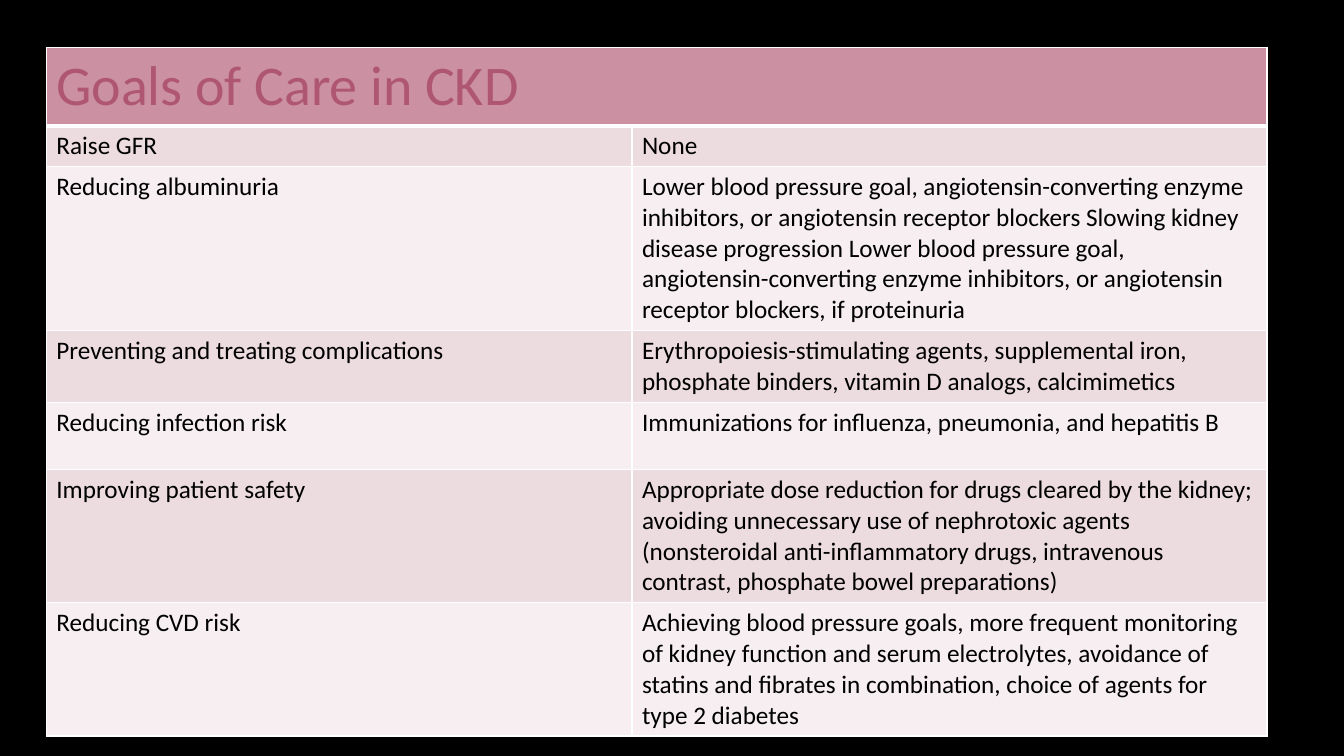
from lxml import etree
from pptx import Presentation, util as u
from pptx.dml.color import RGBColor
from pptx.oxml import ns

GOALS = [
    ("Raise GFR", "None", 28),
    ("Reducing albuminuria",
     "Lower blood pressure goal, angiotensin-converting enzyme inhibitors, or "
     "angiotensin receptor blockers Slowing kidney disease progression Lower "
     "blood pressure goal, angiotensin-converting enzyme inhibitors, or "
     "angiotensin receptor blockers, if proteinuria", 111.6),
    ("Preventing and treating complications",
     "Erythropoiesis-stimulating agents, supplemental iron, phosphate binders, "
     "vitamin D analogs, calcimimetics", 48.24),
    ("Reducing infection risk",
     "Immunizations for influenza, pneumonia, and hepatitis B", 48.24),
    ("Improving patient safety",
     "Appropriate dose reduction for drugs cleared by the kidney; avoiding "
     "unnecessary use of nephrotoxic agents (nonsteroidal anti-inflammatory "
     "drugs, intravenous contrast, phosphate bowel preparations)", 90),
    ("Reducing CVD risk",
     "Achieving blood pressure goals, more frequent monitoring of kidney "
     "function and serum electrolytes, avoidance of statins and fibrates in "
     "combination, choice of agents for type 2 diabetes", 90),
]


def rgb(value):
    return RGBColor.from_string(value)


class Deck:
    font = "Calibri"
    ink = "000000"
    title_ink = "AF5672"
    header_fill = "CB91A3"
    bands = ("ECDCE0", "F6EEF0")
    border = "FFFFFF"

    def __init__(self, width, height):
        self.prs = Presentation()
        self.prs.slide_width, self.prs.slide_height = u.Pt(width), u.Pt(height)

    def add_slide(self, color):
        self.slide = self.prs.slides.add_slide(self.prs.slide_layouts[6])
        fill = self.slide.background.fill
        fill.solid()
        fill.fore_color.rgb = rgb(color)

    def line(self, tag, width, color, alpha=100):
        ln = etree.Element(ns.qn(f"a:{tag}"), w=str(u.Pt(width)))
        fill = etree.SubElement(ln, ns.qn("a:solidFill"))
        clr = etree.SubElement(fill, ns.qn("a:srgbClr"), val=color)
        if alpha < 100:
            etree.SubElement(clr, ns.qn("a:alpha"), val=str(alpha * 1000))
        return ln

    def cell(self, cell, words, fill, size=18, color=ink, bottom=1):
        cell.fill.solid()
        cell.fill.fore_color.rgb = rgb(fill)
        tc_pr = cell._tc.get_or_add_tcPr()
        for i, tag in enumerate(("lnL", "lnR", "lnT", "lnB")):
            width = bottom if tag == "lnB" else 1
            tc_pr.insert(i, self.line(tag, width, self.border))
        p = cell.text_frame.paragraphs[0]
        r = p.add_run()
        r.text = words
        f = r.font
        f.name, f.size, f.bold = self.font, u.Pt(size), False
        f.color.rgb = rgb(color)
        return r

    def table(self, left, top, height, columns, title, title_height, rows):
        frame = self.slide.shapes.add_table(
            len(rows) + 1, len(columns), u.Pt(left), u.Pt(top),
            u.Pt(sum(columns)), u.Pt(height))
        table = frame.table
        for column, width in zip(table.columns, columns):
            column.width = u.Pt(width)

        # Header across all columns, with a faint text outline
        table.rows[0].height = u.Pt(title_height)
        head = table.cell(0, 0)
        head.merge(table.cell(0, len(columns) - 1))
        r = self.cell(head, title, self.header_fill, 40, self.title_ink, 3)
        r.font._element.insert(0, self.line("ln", 0.75, "404040", 10))

        # Banded body rows
        for i, (*words, row_height) in enumerate(rows):
            table.rows[i + 1].height = u.Pt(row_height)
            for j, word in enumerate(words):
                self.cell(table.cell(i + 1, j), word, self.bands[i % 2])
        frame.height = u.Pt(height)


def main():
    deck = Deck(960, 540)
    deck.add_slide("000000")
    deck.table(33.12, 33.84, 485.28, (418.3, 453.6),
               "Goals of Care in CKD", 28, GOALS)
    deck.prs.save("out.pptx")


if __name__ == "__main__":
    main()
